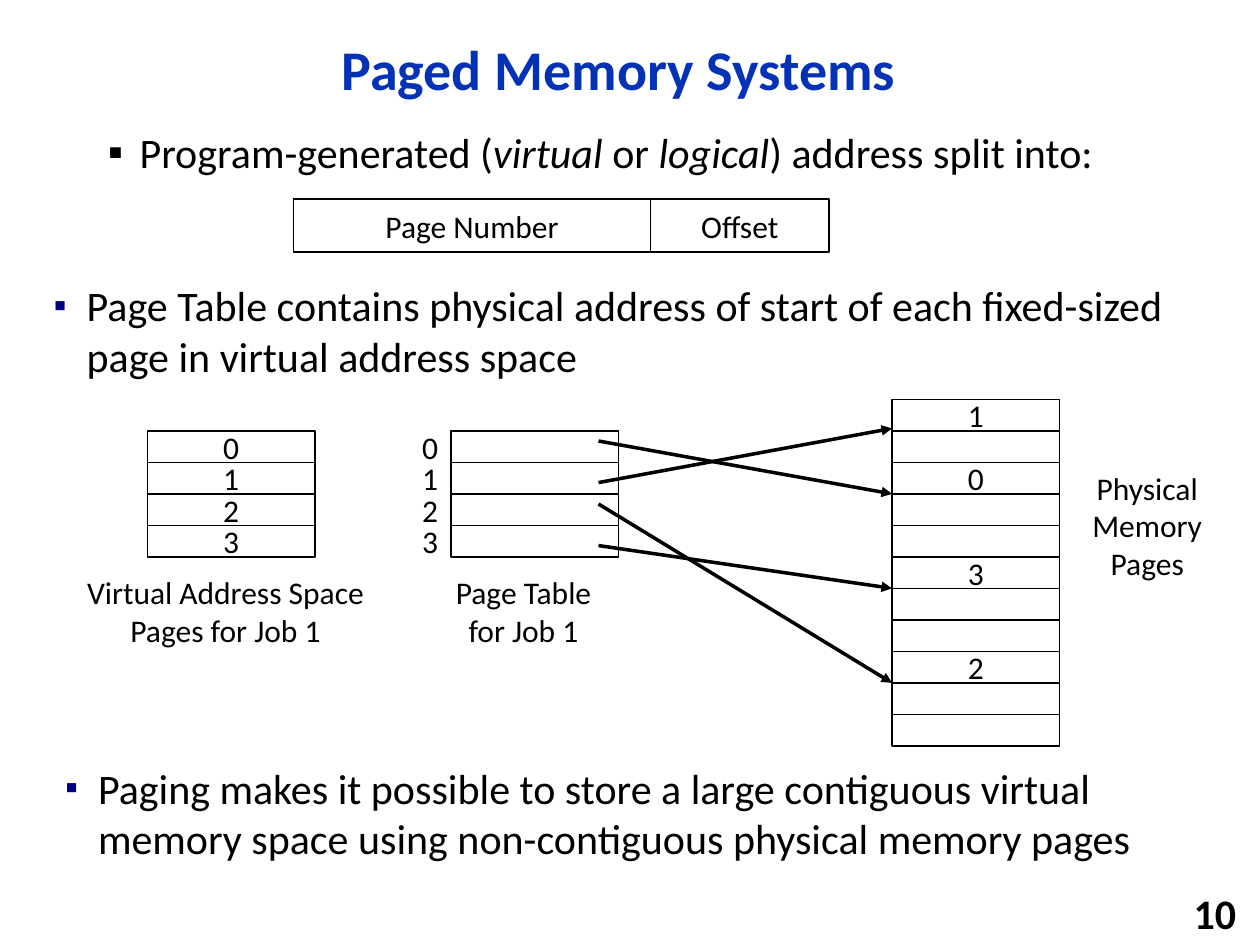
import pptx
import pptx.util
import pptx.dml.color
import pptx.enum.shapes
import pptx.enum.text
import pptx.oxml
import pptx.oxml.ns

Inches, Pt = pptx.util.Inches, pptx.util.Pt
ALIGN, ANCHOR = pptx.enum.text.PP_ALIGN, pptx.enum.text.MSO_ANCHOR
COLORS = {"title": "0332B7", "ink": "000000", "paper": "FFFFFF", "bullet": "000080"}
FONT = "Calibri"
ROW_H, PAGE_W = 0.25, 1.33
MEMORY_ROWS = ["1", "", "0", "", "", "3", "", "", "2", "", ""]


def rgb(name):
    return pptx.dml.color.RGBColor.from_string(COLORS[name])


def style_run(run, size, color="ink", bold=False, italic=False):
    font = run.font
    font.name, font.size, font.bold, font.italic = FONT, Pt(size), bold, italic
    font.color.rgb = rgb(color)


def add_xml(parent, tag, **attributes):
    child = pptx.oxml.ns.qn(tag)
    child = parent.makeelement(child, attributes)
    parent.append(child)
    return child


def add_label(slide, box, text, size=18, align=ALIGN.CENTER, anchor=ANCHOR.TOP,
              color="ink", bold=False):
    label = slide.shapes.add_textbox(*map(Inches, box))
    frame = label.text_frame
    frame.word_wrap = True
    frame.vertical_anchor = anchor
    frame.text = text
    for paragraph in frame.paragraphs:
        paragraph.alignment = align
        for run in paragraph.runs:
            style_run(run, size, color, bold)
    return frame


def add_bullet(slide, box, pieces, indent=0.26, color=None):
    """Write one bulleted paragraph from (text, italic) pieces."""
    paragraph = add_label(slide, box, "", align=ALIGN.LEFT).paragraphs[0]
    properties = paragraph._p.get_or_add_pPr()
    properties.set("marL", str(Inches(indent)))
    properties.set("indent", str(-Inches(indent)))
    if color:
        bullet_color = add_xml(properties, "a:buClr")
        add_xml(bullet_color, "a:srgbClr", val=COLORS[color])
        add_xml(properties, "a:buSzPct", val="85000")
    add_xml(properties, "a:buFont", typeface=FONT)
    add_xml(properties, "a:buChar", char="▪")
    for text, italic in pieces:
        run = paragraph.add_run()
        run.text = text
        style_run(run, 24, italic=italic)
    return paragraph


def add_cell(slide, box, text="", outlined=True, filled=True):
    cell = slide.shapes.add_shape(pptx.enum.shapes.MSO_SHAPE.RECTANGLE, *map(Inches, box))
    cell.shadow.inherit = False
    if filled:
        cell.fill.solid()
        cell.fill.fore_color.rgb = rgb("paper")
    else:
        cell.fill.background()
    if outlined:
        cell.line.color.rgb = rgb("ink")
        cell.line.width = Pt(1)
    else:
        cell.line.fill.background()
    frame = cell.text_frame
    frame.margin_left = frame.margin_right = frame.margin_top = frame.margin_bottom = 0
    frame.word_wrap = False
    frame.vertical_anchor = ANCHOR.MIDDLE
    if text:
        frame.text = text
        frame.paragraphs[0].alignment = ALIGN.CENTER
        style_run(frame.paragraphs[0].runs[0], 18)


def add_column(slide, left, top, width, texts, outlined=True):
    for row, text in enumerate(texts):
        add_cell(slide, (left, top + row * ROW_H, width, ROW_H), text, outlined)


def add_arrow(slide, start, end):
    arrow = slide.shapes.add_connector(pptx.enum.shapes.MSO_CONNECTOR.STRAIGHT,
                                       *map(Inches, start + end))
    arrow.line.color.rgb = rgb("ink")
    arrow.line.width = Pt(2)
    add_xml(arrow.line._get_or_add_ln(), "a:tailEnd", type="triangle")
    add_xml(arrow._element.spPr, "a:effectLst")


def add_address(slide, left, top, width, height):
    """Page number takes two thirds of the address, offset the rest."""
    split = width * 2 / 3
    add_cell(slide, (left, top, split, height), "Page Number", filled=False)
    add_cell(slide, (left + split, top, width - split, height), "Offset", filled=False)


def add_mapping(slide, left, top):
    """Virtual pages, page table and physical memory, with arrows between."""
    pages = ["0", "1", "2", "3"]
    table_left, memory_left = left + 2.41, left + 5.91
    jobs_top = top + ROW_H

    # Virtual pages and the numbered page table
    add_column(slide, left, jobs_top, PAGE_W, pages)
    add_column(slide, table_left - 0.33, jobs_top, 0.33, pages, outlined=False)
    add_column(slide, table_left, jobs_top, PAGE_W, [""] * len(pages))

    # Arrows from page table entries to physical pages
    arrow_left = table_left + 1.17
    for start, end in ((0.33, 0.75), (0.66, 0.23), (0.83, 2.25), (1.16, 1.5)):
        add_arrow(slide, (arrow_left, top + start), (memory_left, top + end))

    add_column(slide, memory_left, top, PAGE_W, MEMORY_ROWS)

    # Captions
    add_label(slide, (left - 0.59, top + 1.33, 2.42, 0.7),
              "Virtual Address Space Pages for Job 1")
    add_label(slide, (table_left - 0.08, top + 1.33, 1.31, 0.7), "Page Table\nfor Job 1")
    add_label(slide, (memory_left + 1.13, top + 0.5, 1.79, 1.01), "Physical Memory\nPages")


def main():
    deck = pptx.Presentation()
    deck.slide_width, deck.slide_height = Inches(10), Inches(7.5)
    slide = deck.slides.add_slide(deck.slide_layouts[6])

    # Title and page number
    title = add_label(slide, (0.92, 0.17, 7.98, 0.81), "Paged Memory Systems", 32,
                      anchor=ANCHOR.MIDDLE, color="title", bold=True)
    title.paragraphs[0].line_spacing = 0.9
    add_label(slide, (7.83, 7.08, 2.08, 0.32), "10", 24, ALIGN.RIGHT,
              ANCHOR.MIDDLE, bold=True)

    # Bulleted statements
    split = add_bullet(slide, (0.76, 1, 8.4, 5.69), [
        ("Program-generated (", False), ("virtual", True), (" or ", False),
        ("logical", True), (") address split into:", False)], indent=0.25)
    split.line_spacing = 0.9
    add_bullet(slide, (0.33, 2.17, 9.33, 0.75), [
        ("Page Table contains physical address of start of each fixed-sized "
         "page in virtual address space", False)], color="bullet")
    add_bullet(slide, (0.42, 6, 9.33, 0.75), [
        ("Paging makes it possible to store a large contiguous virtual "
         "memory space using non-contiguous physical memory pages", False)], color="bullet")

    # Diagrams
    add_address(slide, 2.33, 1.58, 4.25, 0.42)
    add_mapping(slide, 1.17, 3.17)

    deck.save("out.pptx")


if __name__ == "__main__":
    main()
